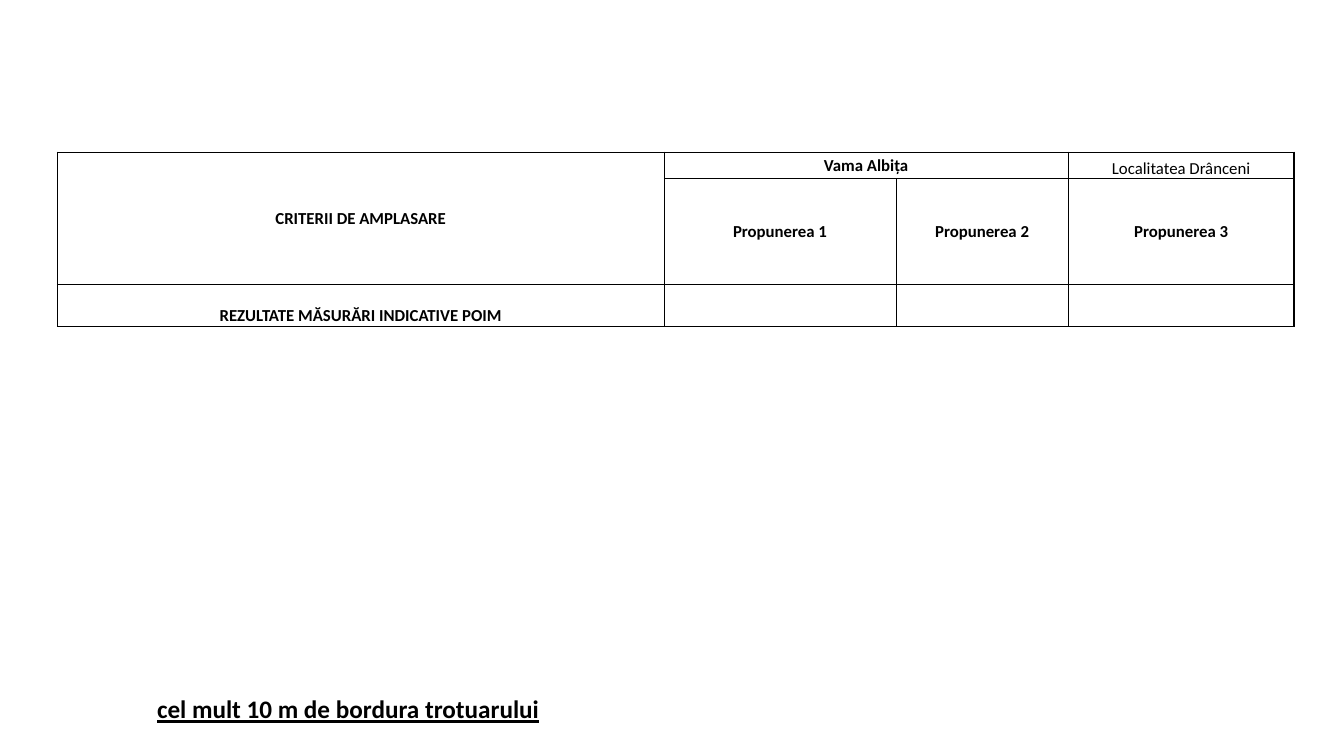
"""Builds the slide that compares siting criteria for three proposals."""
from pptx import Presentation
from pptx.dml.color import RGBColor
from pptx.enum.text import MSO_ANCHOR, MSO_AUTO_SIZE, PP_ALIGN
from pptx.oxml import parse_xml
from pptx.oxml.ns import nsdecls
from pptx.util import Pt

BLACK = RGBColor(0, 0, 0)
MIDDLE, BOTTOM = MSO_ANCHOR.MIDDLE, MSO_ANCHOR.BOTTOM
CENTER = PP_ALIGN.CENTER
FIT_SHAPE = MSO_AUTO_SIZE.SHAPE_TO_FIT_TEXT
FONT = "Calibri"
BLANK_LAYOUT = 6
OUTER, INNER = Pt(1), Pt(0.5)

COLUMN_WIDTHS = [433.4, 165.6, 123.1, 161.3]
ROW_HEIGHTS = [18.8, 75.6, 30]
MERGES = [((0, 0), (1, 0)), ((0, 1), (0, 2))]
LABELS = [
    (0, 0, "CRITERII DE AMPLASARE", MIDDLE, True),
    (0, 1, "Vama Albița", MIDDLE, True),
    (0, 3, "Localitatea Drânceni", BOTTOM, False),
    (1, 1, "Propunerea 1", MIDDLE, True),
    (1, 2, "Propunerea 2", MIDDLE, True),
    (1, 3, "Propunerea 3", MIDDLE, True),
    (2, 0, "REZULTATE MĂSURĂRI INDICATIVE POIM", BOTTOM, True),
]


def add_run(paragraph, text, size, bold=True, underline=False):
    run = paragraph.add_run()
    run.text = text
    font = run.font
    font.name, font.size = FONT, Pt(size)
    font.bold, font.underline = bold, underline
    font.color.rgb = BLACK


def set_borders(cell, widths):
    properties = cell._tc.get_or_add_tcPr()
    for side, width in zip("LRTB", widths):
        properties.append(parse_xml(
            f'<a:ln{side} {nsdecls("a")} w="{width}"><a:solidFill>'
            f'<a:srgbClr val="{BLACK}"/></a:solidFill></a:ln{side}>'))


def fill_label(cell, text, anchor, bold):
    cell.margin_left = cell.margin_right = cell.margin_top = Pt(0.7)
    cell.margin_bottom = Pt(0)
    cell.vertical_anchor = anchor
    paragraph = cell.text_frame.paragraphs[0]
    paragraph.alignment = CENTER
    add_run(paragraph, text, 12, bold)


def add_criteria_table(slide):
    row_count, column_count = len(ROW_HEIGHTS), len(COLUMN_WIDTHS)
    criteria = slide.shapes.add_table(
        row_count, column_count, Pt(41), Pt(108.8),
        Pt(sum(COLUMN_WIDTHS)), Pt(sum(ROW_HEIGHTS))).table
    criteria.first_row = criteria.horz_banding = False
    for column, width in zip(criteria.columns, COLUMN_WIDTHS):
        column.width = Pt(width)
    for row, height in zip(criteria.rows, ROW_HEIGHTS):
        row.height = Pt(height)
    for r in range(row_count):
        for c in range(column_count):
            cell = criteria.cell(r, c)
            on_edge = (c == 0, c == column_count - 1, r == 0, r == row_count - 1)
            set_borders(cell, [OUTER if edge else INNER for edge in on_edge])
            cell.fill.background()
    for first, last in MERGES:
        criteria.cell(*first).merge(criteria.cell(*last))
    for r, c, text, anchor, bold in LABELS:
        fill_label(criteria.cell(r, c), text, anchor, bold)


def add_distance_note(slide):
    frame = slide.shapes.add_textbox(Pt(105.1), Pt(491.8), Pt(290.2), Pt(29)).text_frame
    frame.word_wrap = False
    frame.auto_size = FIT_SHAPE
    add_run(frame.paragraphs[0], "cel mult 10 m de bordura trotuarului", 18, underline=True)


def main():
    presentation = Presentation()
    presentation.slide_width, presentation.slide_height = Pt(960), Pt(540)
    slide = presentation.slides.add_slide(presentation.slide_layouts[BLANK_LAYOUT])
    add_criteria_table(slide)
    add_distance_note(slide)
    presentation.save("out.pptx")


if __name__ == "__main__":
    main()
